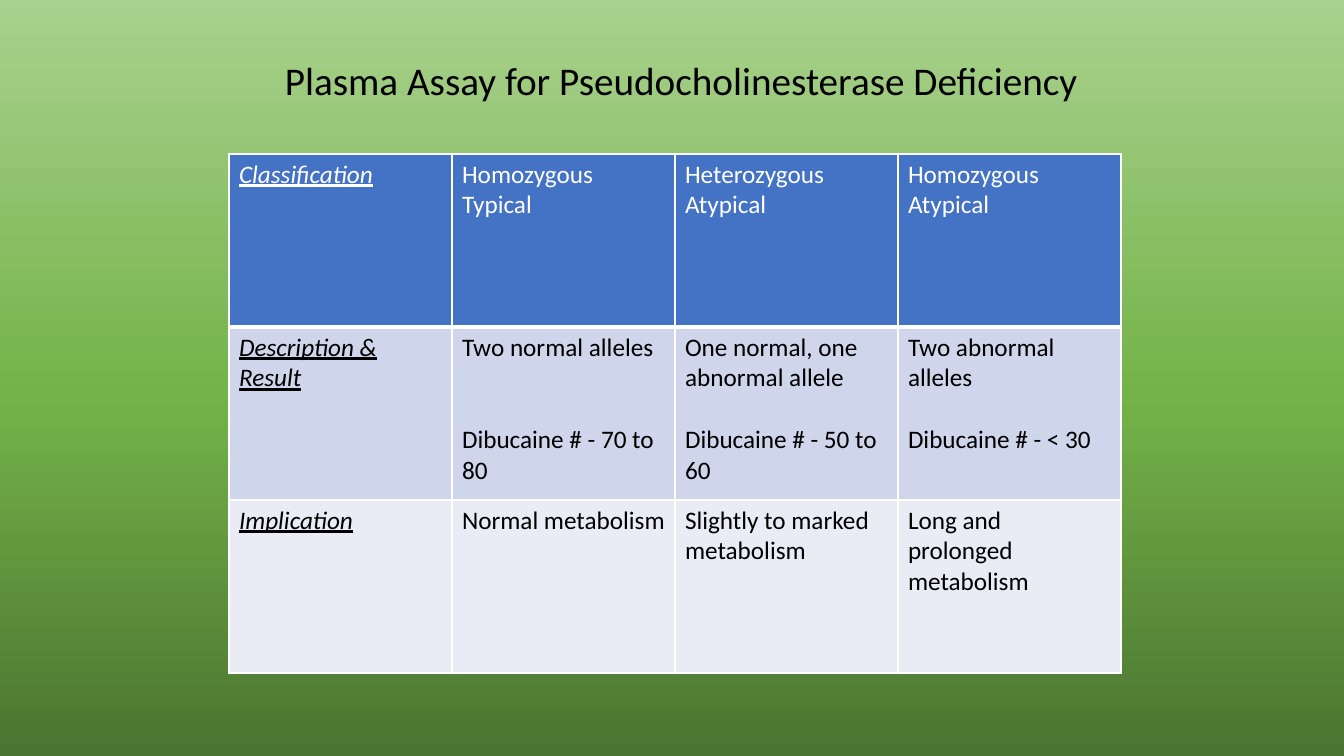
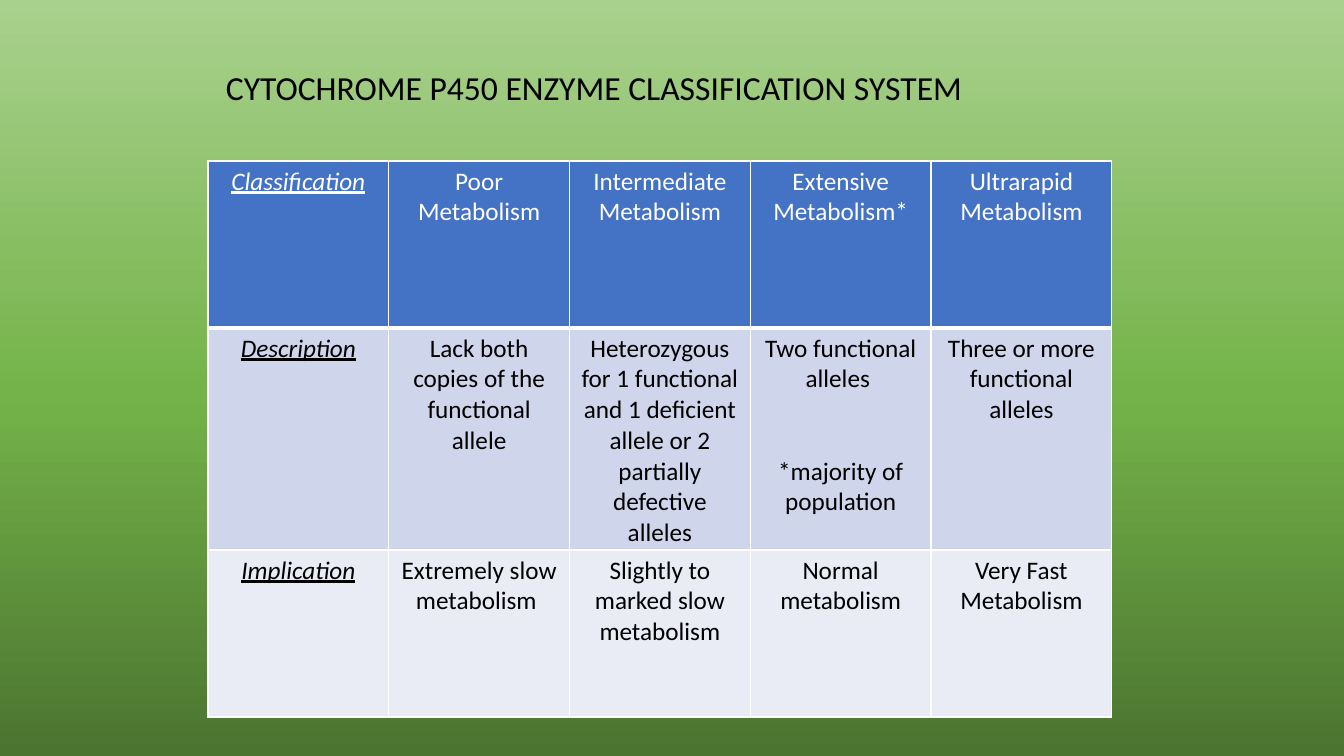
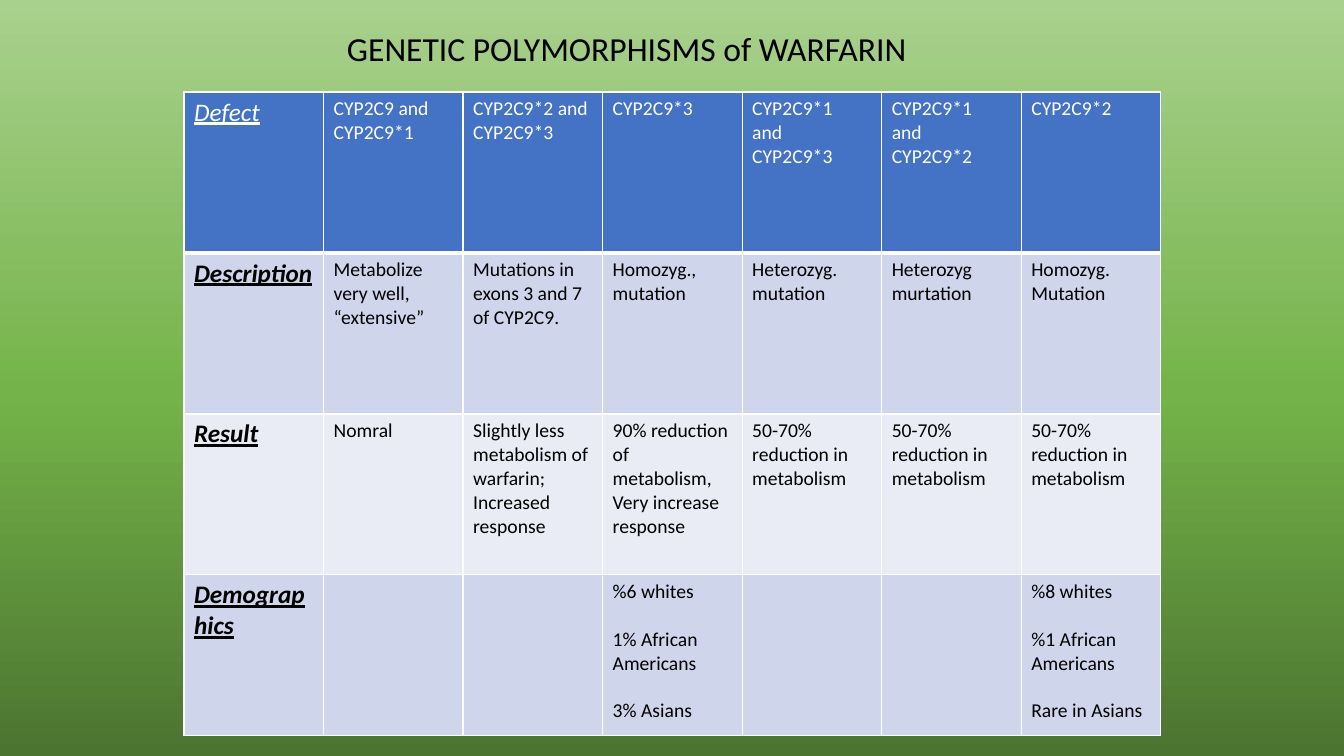
from copy import deepcopy
from itertools import zip_longest

from lxml import etree
from pptx import Presentation
from pptx.dml.color import RGBColor
from pptx.enum.text import MSO_AUTO_SIZE, PP_ALIGN
from pptx.oxml.ns import qn
from pptx.util import Emu, Pt

LEFT, CENTER = PP_ALIGN.LEFT, PP_ALIGN.CENTER
GROW = MSO_AUTO_SIZE.SHAPE_TO_FIT_TEXT

# Shared look
FONT = "Calibri"
BLACK, WHITE = "000000", "FFFFFF"
HEAD, BANDS = "4472C4", ("CFD5EA", "E9EBF5")
GRAD = ((0, "4B7430"), (0.48, "74B349"), (1, "A9D18E"))
LINE = 1.22  # line height as a share of the font size
LABEL = {"size": Pt(18), "italic": True, "underline": True}

ASSAY = [
    ["Classification", "Homozygous Typical", "Heterozygous Atypical",
     "Homozygous Atypical"],
    ["Description & Result",
     "Two normal alleles\n\n\nDibucaine # - 70 to 80",
     "One normal, one abnormal allele\n\nDibucaine # - 50 to 60",
     "Two abnormal alleles\n\nDibucaine # - < 30"],
    ["Implication", "Normal metabolism", "Slightly to marked metabolism",
     "Long and prolonged metabolism"],
]
ENZYME = [
    ["Classification", "Poor Metabolism", "Intermediate Metabolism",
     "Extensive Metabolism*", "Ultrarapid Metabolism"],
    ["Description", "Lack both copies of the functional allele",
     "Heterozygous for 1 functional and 1 deficient allele or 2 partially "
     "defective alleles",
     "Two functional alleles \n\n\n*majority of population",
     "Three or more functional alleles"],
    ["Implication", "Extremely slow metabolism ",
     "Slightly to marked slow metabolism", "Normal metabolism",
     "Very Fast Metabolism"],
]
DROP = "50-70% reduction in metabolism"
GENES = [
    ["Defect", "CYP2C9 and\nCYP2C9*1", "CYP2C9*2 and\nCYP2C9*3", "CYP2C9*3",
     "CYP2C9*1\nand\nCYP2C9*3", "CYP2C9*1\nand\nCYP2C9*2", "CYP2C9*2"],
    ["Description", "Metabolize very well, “extensive”",
     "Mutations in exons 3 and 7 of CYP2C9.", "Homozyg., mutation",
     "Heterozyg.\nmutation", "Heterozyg murtation", "Homozyg. Mutation"],
    ["Result", "Nomral",
     "Slightly less metabolism of warfarin;\nIncreased response",
     "90% reduction of metabolism, Very increase response",
     DROP, DROP, DROP],
    ["Demographics", "", "",
     "%6 whites\n\n1% African Americans\n\n3% Asians", "", "",
     "%8 whites\n\n%1 African Americans\n\nRare in Asians"],
]


def px(num):
    return Emu(round(num * 12192000 / 1344))


def rgb(code):
    return RGBColor.from_string(code)


def paint(master):
    """Give the master its green gradient."""
    fill = master.background.fill
    fill.gradient()
    fill.gradient_angle = 90
    stops = master.element.find(".//" + qn("a:gsLst"))
    stops.append(deepcopy(stops[-1]))
    for stop, (pos, code) in zip_longest(fill.gradient_stops, GRAD):
        stop.position = pos
        stop.color.rgb = rgb(code)


def write(frame, text, color, look, align=LEFT):
    """Write one paragraph a line; empty lines become space before the next."""
    para, gap = frame.paragraphs[0], 0
    for num, line in enumerate(text.split("\n")):
        if not line:
            gap += 1
            continue
        if num:
            para = frame.add_paragraph()
        para.alignment = align
        if gap:
            para.space_before = Pt(round(gap * LINE * look["size"].pt))
        gap = 0
        run = para.add_run()
        run.text = line
        run.font.color.rgb = rgb(color)
        for key, val in {"name": FONT, "bold": False, **look}.items():
            setattr(run.font, key, val)


def edge(cell, foot):
    """Draw white cell borders; foot is the width of the lower one."""
    props = cell._tc.get_or_add_tcPr()
    for num, (side, wide) in enumerate(zip("LRTB", (1, 1, 1, foot))):
        line = etree.Element(qn("a:ln" + side), w=str(Pt(wide)))
        fill = etree.SubElement(line, qn("a:solidFill"))
        etree.SubElement(fill, qn("a:srgbClr"), val=WHITE)
        props.insert(num, line)


def title(slide, text, box, size, wrap=False):
    frame = slide.shapes.add_textbox(*map(px, box)).text_frame
    frame.word_wrap = wrap
    frame.auto_size = GROW
    write(frame, text, BLACK, {"size": Pt(size)})


def grid(slide, data, spot, width, tall, size=18, align=LEFT, bold=False):
    """Add a table with equal columns; tall lists the row heights."""
    box = map(px, (*spot, width, sum(tall)))
    table = slide.shapes.add_table(len(data), len(data[0]), *box).table
    for row, (texts, high) in enumerate(zip(data, tall)):
        table.rows[row].height = px(high)
        head = row == 0
        for col, text in enumerate(texts):
            cell = table.cell(row, col)
            cell.fill.solid()
            cell.fill.fore_color.rgb = rgb(HEAD if head else BANDS[(row - 1) % 2])
            edge(cell, 3 if head else 1)
            look = {"size": Pt(size)}
            if col == 0:
                look = {**LABEL, "bold": bold and not head}
            write(cell.text_frame, text, WHITE if head else BLACK, look, align)


def main():
    prs = Presentation()
    prs.slide_width, prs.slide_height = px(1344), px(756)
    paint(prs.slide_master)
    blank = prs.slide_layouts[6]

    # Plasma assay
    slide = prs.slides.add_slide(blank)
    grid(slide, ASSAY, (229, 154), 892, [173] * 3)
    title(slide, "Plasma Assay for Pseudocholinesterase Deficiency",
          (275, 51, 831, 57), 28)

    # Enzyme classes
    slide = prs.slides.add_slide(blank)
    grid(slide, ENZYME, (208, 161), 904, [167, 222, 167], align=CENTER)
    title(slide, "CYTOCHROME P450 ENZYME CLASSIFICATION SYSTEM",
          (216, 62, 961, 50), 24, wrap=True)

    # Gene variants
    slide = prs.slides.add_slide(blank)
    grid(slide, GENES, (184, 92), 977, [161] * 4, size=14, bold=True)
    title(slide, "GENETIC POLYMORPHISMS of WARFARIN", (337, 23, 593, 50), 24)

    prs.save("out.pptx")


if __name__ == "__main__":
    main()
